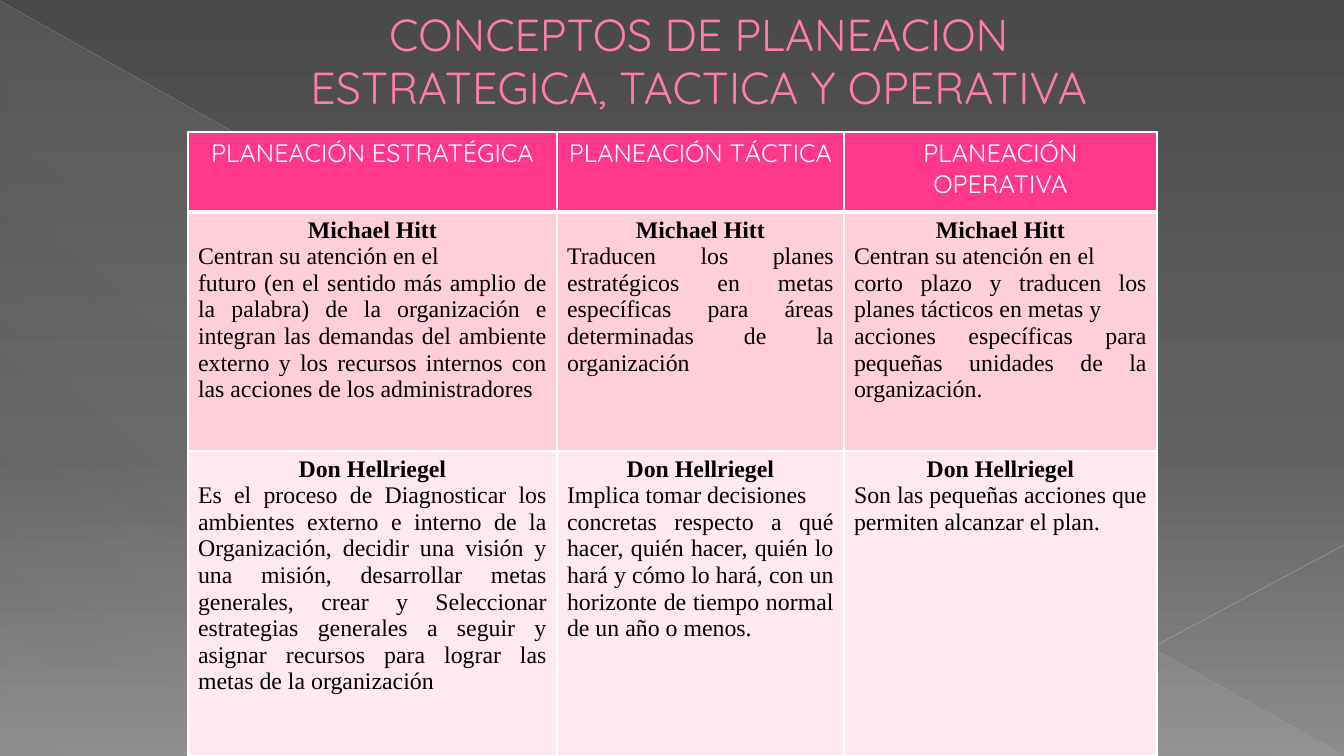
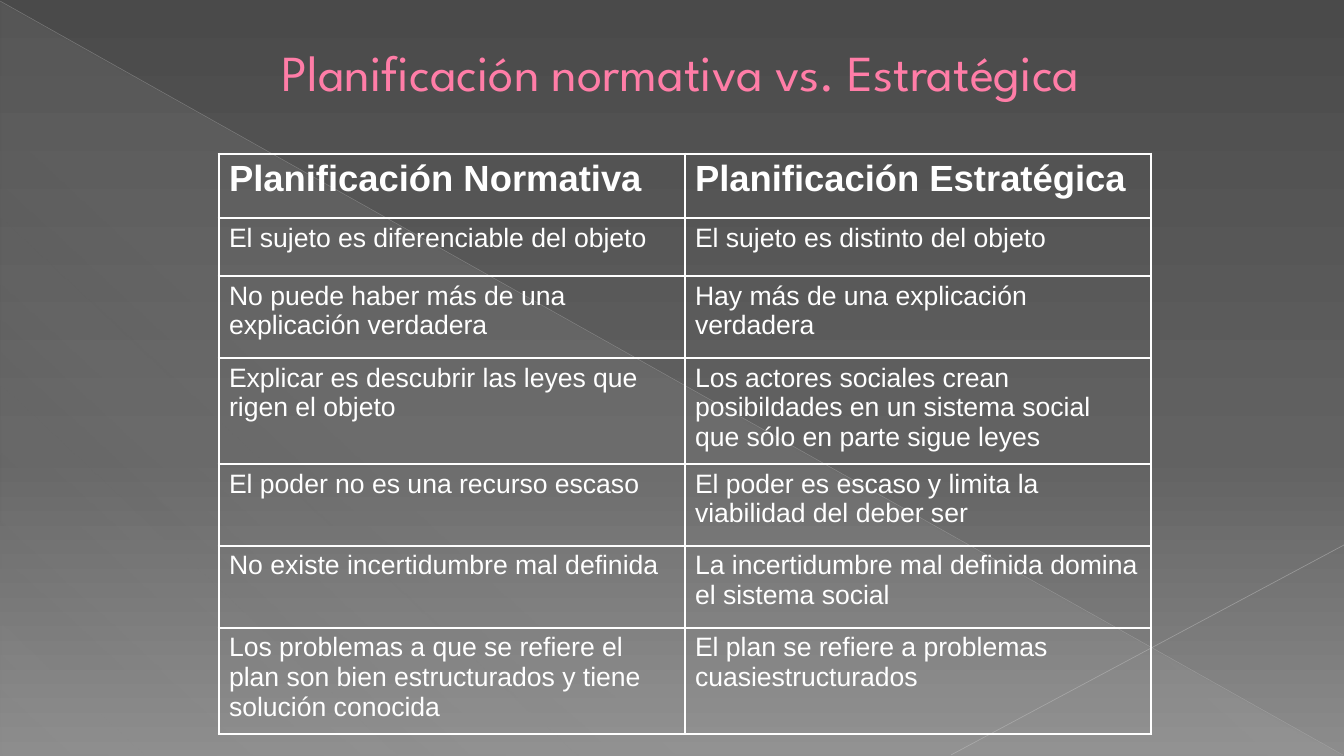
import pptx
import pptx.dml.color
import pptx.enum.shapes
import pptx.enum.text
import pptx.oxml
import pptx.oxml.ns
import pptx.util
from dataclasses import dataclass
from lxml import etree

ALIGN = pptx.enum.text.PP_ALIGN
ANCHOR = pptx.enum.text.MSO_ANCHOR
PX = pptx.util.Inches(1) / 100.8
WIDTH, HEIGHT = 1344, 756


@dataclass(frozen=True)
class Theme:
    backdrop: tuple = ((0, "4A4A4A", 100), (60, "626262", 100), (100, "8C8C8C", 100))
    sheen: tuple = ((0, "D2D2D2", 10), (70, "D2D2D2", 8), (100, "D2D2D2", 1))
    diagonal: str = "BFBFBF"
    corner: str = "C6C6C6"
    title: str = "FF7DA7"
    title_outline: str = "B12761"
    header: str = "FF388C"
    bands: tuple = ("FFCEDA", "FFE8EE")
    white: str = "FFFFFF"
    black: str = "000000"
    display: str = "Quicksand"
    geometric: str = "League Spartan"
    serif: str = "Times New Roman"
    sans: str = "Arial"
    concepts_title_size: int = 32
    contrast_title_size: int = 36
    concepts_header_size: int = 18
    concepts_body_size: int = 17
    contrast_header_size: int = 26
    contrast_body_size: int = 19
    outline_width: float = 0.5
    rule: float = 1
    header_rule: float = 3
    frame_rule: float = 2.25


THEME = Theme()

DECOR_LINES = [
    ((0, 1), (1343, 755), THEME.diagonal, 0.39, 35),
    ((1344, 545), (951, 755), THEME.corner, 0.47, 45),
]

CONCEPTS_TITLE = "CONCEPTOS DE PLANEACION ESTRATEGICA, TACTICA Y OPERATIVA"
CONCEPTS_GRID = dict(left=188, top=132, columns=[369, 287, 313], rows=[80, 239, 305])
CONCEPTS_HEADERS = ["PLANEACIÓN ESTRATÉGICA", "PLANEACIÓN TÁCTICA", "PLANEACIÓN OPERATIVA"]
CONCEPTS = [
    ("Michael Hitt", [
        ["Centran su atención en el",
         "futuro (en el sentido más amplio de la palabra) de la organización e integran "
         "las demandas del ambiente externo y los recursos internos con las acciones de "
         "los administradores"],
        ["Traducen los planes estratégicos en metas específicas para áreas determinadas "
         "de la organización"],
        ["Centran su atención en el",
         "corto plazo y traducen los planes tácticos en metas y",
         "acciones específicas para pequeñas unidades de la organización."],
    ]),
    ("Don Hellriegel", [
        ["Es el proceso de Diagnosticar los ambientes externo e interno de la "
         "Organización, decidir una visión y una misión, desarrollar metas generales, "
         "crear y Seleccionar estrategias generales a seguir y asignar recursos para "
         "lograr las metas de la organización"],
        ["Implica tomar decisiones",
         "concretas respecto a qué hacer, quién hacer, quién lo hará y cómo lo hará, con "
         "un horizonte de tiempo normal de un año o menos."],
        ["Son las pequeñas acciones que permiten alcanzar el plan."],
    ]),
]

CONTRAST_TITLE = "Planificación normativa vs. Estratégica"
CONTRAST_GRID = dict(left=219, top=154, columns=[466, 466],
                     rows=[64, 58, 82, 106, 82, 82, 106])
CONTRAST = [
    ("Planificación Normativa", "Planificación Estratégica"),
    ("El sujeto es diferenciable del objeto", "El sujeto es distinto del objeto"),
    ("No puede haber más de una explicación verdadera",
     "Hay más de una explicación verdadera"),
    ("Explicar es descubrir las leyes que rigen el objeto",
     "Los actores sociales crean posibildades en un sistema social que sólo en parte "
     "sigue leyes"),
    ("El poder no es una recurso escaso",
     "El poder es escaso y limita la viabilidad del deber ser"),
    ("No existe incertidumbre mal definida",
     "La incertidumbre mal definida domina el sistema social"),
    ("Los problemas a que se refiere el plan son bien estructurados y tiene solución "
     "conocida",
     "El plan se refiere a problemas cuasiestructurados"),
]


def px(*lengths):
    return [pptx.util.Emu(round(length * PX)) for length in lengths]


def rgb(value):
    return pptx.dml.color.RGBColor.from_string(value)


def child(parent, tag, **attributes):
    element = etree.SubElement(parent, pptx.oxml.ns.qn(tag))
    for name, value in attributes.items():
        element.set(name, str(value))
    return element


def solid(parent, color):
    child(child(parent, "a:solidFill"), "a:srgbClr", val=color)


def gradient(fill, owner, stops, angle):
    fill.gradient()
    grad = owner.xpath(".//a:gradFill")[0]
    for part in list(grad):
        grad.remove(part)
    stop_list = child(grad, "a:gsLst")
    for position, color, opacity in stops:
        stop = child(stop_list, "a:gs", pos=position * 1000)
        shade = child(stop, "a:srgbClr", val=color)
        if opacity < 100:
            child(shade, "a:alpha", val=opacity * 1000)
    child(grad, "a:lin", ang=angle * 60000, scaled=0)


def write(frame, text, *, font, size, color, bold=False, align=ALIGN.LEFT,
          indent=0, outline=None):
    para = frame.add_paragraph() if frame.text else frame.paragraphs[0]
    para.alignment = align
    if indent:
        para._p.get_or_add_pPr().set("marL", str(px(indent)[0]))
    span = para.add_run()
    span.text = text
    span.font.name = font
    span.font.size = pptx.util.Pt(size)
    span.font.bold = bold
    span.font.color.rgb = rgb(color)
    if outline:
        properties = span._r.get_or_add_rPr()
        line = child(properties, "a:ln", w=pptx.util.Pt(THEME.outline_width))
        solid(line, outline)
        properties.insert(0, line)


def add_page(deck):
    page = deck.slides.add_slide(deck.slide_layouts[6])
    triangle = page.shapes.add_shape(
        pptx.enum.shapes.MSO_SHAPE.RIGHT_TRIANGLE, *px(1, 2, 1342, 754))
    triangle.shadow.inherit = False
    triangle.line.fill.background()
    gradient(triangle.fill, triangle.element, THEME.sheen, 133)
    for start, end, color, width, opacity in DECOR_LINES:
        line = page.shapes.add_connector(
            pptx.enum.shapes.MSO_CONNECTOR.STRAIGHT, *px(*start, *end))
        line.line.width = pptx.util.Pt(width)
        line.line.color.rgb = rgb(color)
        child(line.element.xpath(".//a:ln//a:srgbClr")[0], "a:alpha", val=opacity * 1000)
        child(line.element.spPr, "a:effectLst")
    return page


def add_title(page, text, top, **text_format):
    box = page.shapes.add_textbox(*px(219, top, 907, 126))
    frame = box.text_frame
    frame.word_wrap = True
    frame.vertical_anchor = ANCHOR.MIDDLE
    write(frame, text, color=THEME.title, outline=THEME.title_outline, indent=53,
          **text_format)


def add_grid(page, left, top, columns, rows):
    holder = page.shapes.add_table(
        len(rows), len(columns), *px(left, top, sum(columns), sum(rows)))
    table = holder.table
    table.first_row = False
    table.horz_banding = False
    for column, width in zip(table.columns, px(*columns)):
        column.width = width
    for row, height in zip(table.rows, px(*rows)):
        row.height = height
    return table


def finish_cell(cell, fill=None, **widths):
    if fill:
        cell.fill.solid()
        cell.fill.fore_color.rgb = rgb(fill)
    else:
        cell.fill.background()
    properties = cell._tc.get_or_add_tcPr()
    for index, side in enumerate("LRTB"):
        width = widths.get(side, THEME.rule)
        line = child(properties, f"a:ln{side}", w=pptx.util.Pt(width))
        solid(line, THEME.white)
        properties.insert(index, line)


def build_concepts(deck):
    page = add_page(deck)
    add_title(page, CONCEPTS_TITLE, -3, font=THEME.display,
              size=THEME.concepts_title_size, align=ALIGN.CENTER)
    table = add_grid(page, **CONCEPTS_GRID)
    for column, text in enumerate(CONCEPTS_HEADERS):
        cell = table.cell(0, column)
        write(cell.text_frame, text, font=THEME.display, color=THEME.white,
              size=THEME.concepts_header_size, align=ALIGN.CENTER)
        finish_cell(cell, THEME.header, B=THEME.header_rule)
    body = dict(font=THEME.serif, size=THEME.concepts_body_size, color=THEME.black)
    for row, (author, definitions) in enumerate(CONCEPTS, 1):
        for column, lines in enumerate(definitions):
            cell = table.cell(row, column)
            write(cell.text_frame, author, bold=True, align=ALIGN.CENTER, **body)
            for text in lines:
                write(cell.text_frame, text, align=ALIGN.JUSTIFY, **body)
            finish_cell(cell, THEME.bands[row - 1])


def build_contrast(deck):
    page = add_page(deck)
    add_title(page, CONTRAST_TITLE, 8, font=THEME.geometric,
              size=THEME.contrast_title_size)
    table = add_grid(page, **CONTRAST_GRID)
    for row, texts in enumerate(CONTRAST):
        heading = row == 0
        size = THEME.contrast_header_size if heading else THEME.contrast_body_size
        for column, text in enumerate(texts):
            cell = table.cell(row, column)
            write(cell.text_frame, text, font=THEME.sans, size=size,
                  color=THEME.white, bold=heading)
            outer = dict(L=column == 0, R=column == len(texts) - 1,
                         T=heading, B=row == len(CONTRAST) - 1)
            finish_cell(cell, **{side: THEME.frame_rule
                                 for side, edge in outer.items() if edge})


def main():
    deck = pptx.Presentation()
    deck.slide_width, deck.slide_height = px(WIDTH, HEIGHT)
    master = deck.slide_master
    gradient(master.background.fill, master.element, THEME.backdrop, 90)
    build_concepts(deck)
    build_contrast(deck)
    deck.save("out.pptx")


if __name__ == "__main__":
    main()
